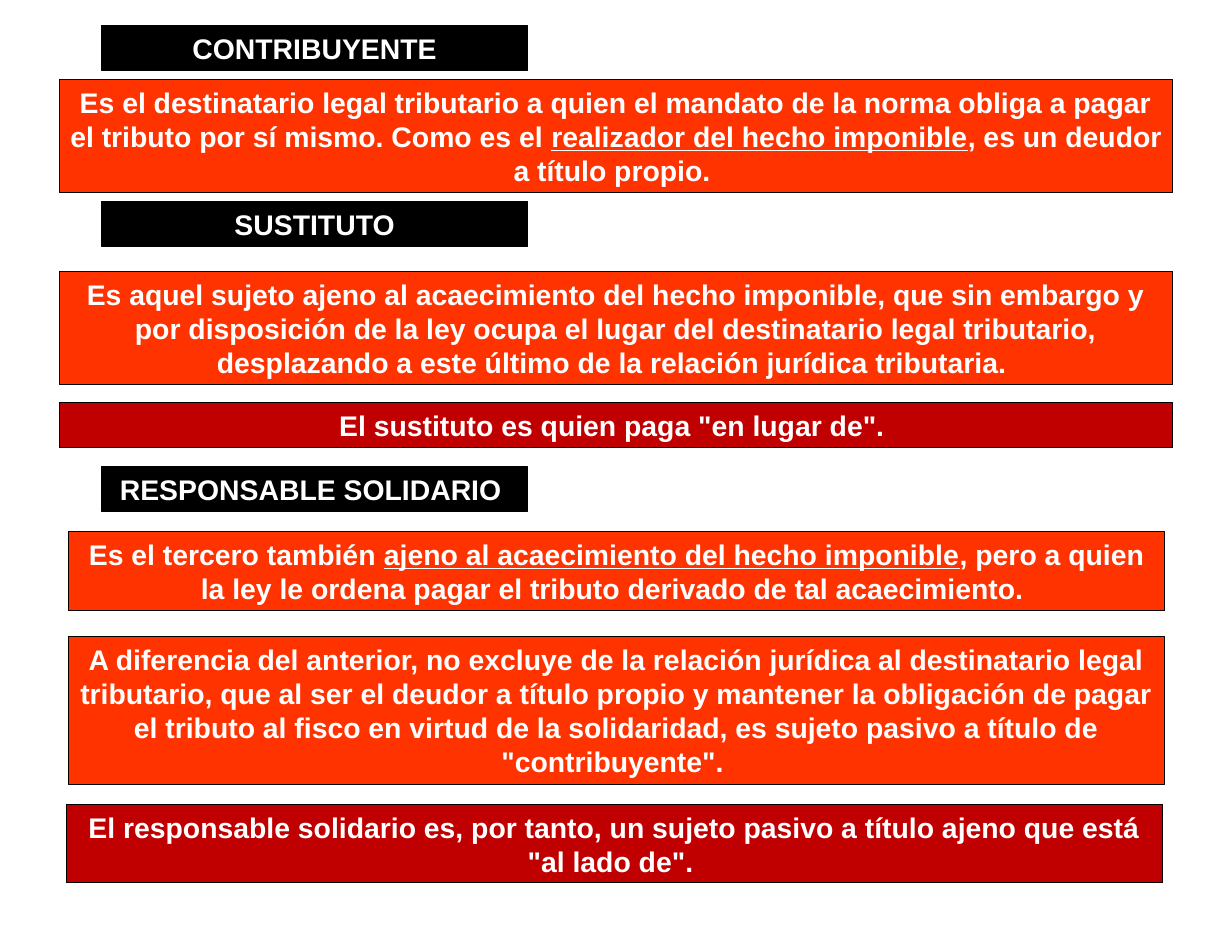
"""Build a slide that defines the three kinds of taxpayer."""
from pptx import Presentation
from pptx.dml.color import RGBColor
from pptx.enum import shapes, text
from pptx.util import Inches, Pt

BLACK = RGBColor(0x00, 0x00, 0x00)
WHITE = RGBColor(0xFF, 0xFF, 0xFF)
ORANGE = RGBColor(0xFF, 0x33, 0x00)
RED = RGBColor(0xC0, 0x00, 0x00)

HEADING = dict(left=1, width=4.17, height=0.44, fill=BLACK)
WIDE = dict(left=0.58, width=10.92, fill=ORANGE)
NARROW = dict(left=0.67, width=10.75, fill=ORANGE)

# Each text is a list of parts; every second part is underlined.
BOXES = [
    (["CONTRIBUYENTE"], dict(HEADING, top=0.25)),
    (["Es el destinatario legal tributario a quien el mandato de la norma obliga "
      "a pagar el tributo por sí mismo. Como es el ",
      "realizador del hecho imponible",
      ", es un deudor a título propio. "], dict(WIDE, top=0.78, height=1.11)),
    (["SUSTITUTO"], dict(HEADING, top=1.98)),
    (["Es aquel sujeto ajeno al acaecimiento del hecho imponible, que sin embargo "
      "y por disposición de la ley ocupa el lugar del destinatario legal "
      "tributario, desplazando a este último de la relación jurídica "
      "tributaria. "], dict(WIDE, top=2.66, height=1.11)),
    (['El sustituto es quien paga "en lugar de". '],
     dict(WIDE, top=3.95, height=0.44, fill=RED)),
    (["RESPONSABLE SOLIDARIO "], dict(HEADING, top=4.58)),
    (["Es el tercero también ",
      "ajeno al acaecimiento del hecho imponible",
      ", pero a quien la ley le ordena pagar el tributo derivado de tal "
      "acaecimiento. "], dict(NARROW, top=5.21, height=0.78)),
    (["A diferencia del anterior, no excluye de la relación jurídica al "
      "destinatario legal tributario, que al ser el deudor a título propio y "
      "mantener la obligación de pagar el tributo al fisco en virtud de la "
      'solidaridad, es sujeto pasivo a título de "contribuyente". '],
     dict(NARROW, top=6.24, height=1.45)),
    (["El responsable solidario es, por tanto, un sujeto pasivo a título ajeno "
      'que está "al lado de". '],
     dict(NARROW, left=0.65, top=7.89, height=0.77, fill=RED)),
]


def add_box(s, parts, *, left, top, width, height, fill, size=20):
    """Add a filled rectangle with centred bold text."""
    sp = s.shapes.add_shape(shapes.MSO_SHAPE.RECTANGLE, Inches(left), Inches(top),
                            Inches(width), Inches(height))
    sp.shadow.inherit = False
    sp.fill.solid()
    sp.fill.fore_color.rgb = fill
    sp.line.color.rgb = BLACK
    sp.line.width = Pt(0.75)
    tf = sp.text_frame
    tf.word_wrap = True
    tf.auto_size = text.MSO_AUTO_SIZE.SHAPE_TO_FIT_TEXT
    tf.vertical_anchor = text.MSO_ANCHOR.MIDDLE
    p = tf.paragraphs[0]
    p.alignment = text.PP_ALIGN.CENTER
    for i, part in enumerate(parts):
        r = p.add_run()
        r.text = part
        r.font.name = "Arial"
        r.font.size = Pt(size)
        r.font.bold = True
        r.font.underline = i % 2 == 1
        r.font.color.rgb = WHITE


def main():
    """Create the presentation and save it."""
    prs = Presentation()
    prs.slide_width, prs.slide_height = Inches(12.08), Inches(9.17)
    s = prs.slides.add_slide(prs.slide_layouts[6])
    for parts, style in BOXES:
        add_box(s, parts, **style)
    prs.save("out.pptx")


if __name__ == "__main__":
    main()
